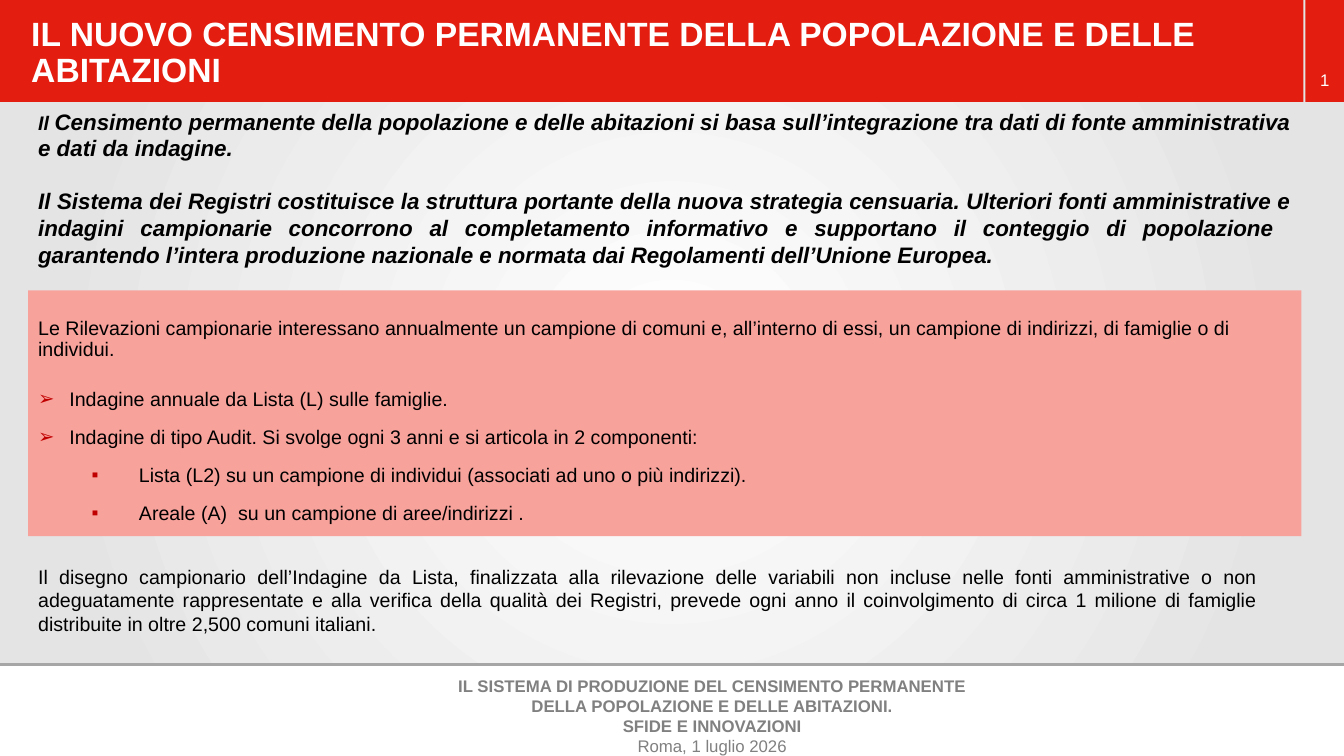
from lxml import etree
from pptx import Presentation
from pptx.dml.color import RGBColor
from pptx.enum.shapes import MSO_CONNECTOR, MSO_SHAPE
from pptx.enum.text import MSO_ANCHOR, MSO_AUTO_SIZE, PP_ALIGN
from pptx.oxml import parse_xml
from pptx.oxml.ns import qn
from pptx.util import Inches, Pt

LEFT, CENTER, JUSTIFY = PP_ALIGN.LEFT, PP_ALIGN.CENTER, PP_ALIGN.JUSTIFY
TOP, BOTTOM = MSO_ANCHOR.TOP, MSO_ANCHOR.BOTTOM
RECTANGLE, STRAIGHT = MSO_SHAPE.RECTANGLE, MSO_CONNECTOR.STRAIGHT
GROW = MSO_AUTO_SIZE.SHAPE_TO_FIT_TEXT

WHITE = RGBColor(0xFF, 0xFF, 0xFF)
BLACK = RGBColor(0, 0, 0)
RED = RGBColor(0xE3, 0x1E, 0x11)
PINK = RGBColor(0xF8, 0xA2, 0x9C)
BULLET_RED = RGBColor(0xC0, 0, 0)
GRAY = RGBColor(0x80, 0x80, 0x80)
RULE_GRAY = RGBColor(0xA6, 0xA6, 0xA6)
EDGE_GRAY = RGBColor(0xE4, 0xE4, 0xE4)

FONT = "Arial"
SLIDE_W, SLIDE_H = Inches(13.333), Inches(7.5)
MARGIN = 2.1  # percent of the slide width
CONTENT_W = 94.73
HEADER_H = 13.47  # percent of the slide height
INSETS = (0.1, 0.05, 0.1, 0.05)  # left, top, right, bottom in inches

TITLE = "IL NUOVO CENSIMENTO PERMANENTE DELLA POPOLAZIONE E DELLE ABITAZIONI"
REGISTERS = (
    "Il Sistema dei Registri costituisce la struttura portante della nuova strategia "
    "censuaria. Ulteriori fonti amministrative e indagini campionarie concorrono al "
    "completamento informativo e supportano il conteggio di popolazione  garantendo "
    "l’intera produzione nazionale e normata dai Regolamenti dell’Unione Europea."
)
SAMPLE_INTRO = (
    "Le Rilevazioni campionarie interessano annualmente un campione di comuni e, "
    "all’interno di essi, un campione di indirizzi, di famiglie o di individui."
)
# Bullet, text margin and hanging indent in inches, text
SURVEYS = [
    ("➢", 0.31, 0.31, "Indagine annuale da Lista (L) sulle famiglie."),
    ("➢", 0.31, 0.31, "Indagine di tipo Audit. Si svolge ogni 3 anni e si articola in 2 componenti:"),
    ("▪", 1, 0.47, "Lista (L2) su un campione di individui (associati ad uno o più indirizzi)."),
    ("▪", 1, 0.47, "Areale (A)  su un campione di aree/indirizzi ."),
]
DESIGN = (
    "Il disegno campionario dell’Indagine da Lista, finalizzata alla rilevazione delle "
    "variabili non incluse nelle fonti amministrative o non adeguatamente rappresentate "
    "e alla verifica della qualità dei Registri, prevede ogni anno il coinvolgimento di "
    "circa 1 milione di famiglie distribuite in oltre 2,500 comuni italiani."
)
EVENT = [
    "IL SISTEMA DI PRODUZIONE DEL CENSIMENTO PERMANENTE",
    "DELLA POPOLAZIONE E DELLE ABITAZIONI.",
    "SFIDE E INNOVAZIONI",
]


def across(percent):
    return round(SLIDE_W * percent / 100)


def down(percent):
    return round(SLIDE_H * percent / 100)


def area(left, top, width, height):
    return across(left), down(top), across(width), down(height)


def set_background(slide):
    stops = "".join(
        f'<a:gs pos="{share * 1000}"><a:srgbClr val="{color}"/></a:gs>'
        for share, color in [(0, WHITE), (83, EDGE_GRAY), (99, EDGE_GRAY)]
    )
    gradient = parse_xml(
        '<a:gradFill xmlns:a="http://schemas.openxmlformats.org/drawingml/2006/main" '
        f'rotWithShape="1"><a:gsLst>{stops}</a:gsLst><a:path path="circle">'
        '<a:fillToRect l="50000" t="50000" r="50000" b="50000"/></a:path></a:gradFill>'
    )
    fill = slide.background.fill
    fill.solid()
    solid = slide.element.find(".//" + qn("p:bgPr")).find(qn("a:solidFill"))
    solid.getparent().replace(solid, gradient)


def set_frame(frame, insets=INSETS, anchor=TOP):
    frame.word_wrap = True
    frame.vertical_anchor = anchor
    frame.margin_left, frame.margin_top, frame.margin_right, frame.margin_bottom = map(Inches, insets)
    return frame


def add_panel(slide, place, color, insets=INSETS, anchor=TOP):
    panel = slide.shapes.add_shape(RECTANGLE, *area(*place))
    panel.shadow.inherit = False
    panel.fill.solid()
    panel.fill.fore_color.rgb = color
    panel.line.fill.background()
    return set_frame(panel.text_frame, insets, anchor)


def add_text_area(slide, place, insets=INSETS):
    frame = slide.shapes.add_textbox(*area(*place)).text_frame
    frame.auto_size = GROW
    return set_frame(frame, insets)


def add_rule(slide, top):
    rule = slide.shapes.add_connector(STRAIGHT, 0, down(top), SLIDE_W, down(top))
    rule.line.color.rgb = RULE_GRAY
    rule.line.width = Pt(1.75)
    etree.SubElement(rule._element.spPr, qn("a:effectLst"))


def write(frame, text, size, color=BLACK, bold=False, italic=False, align=LEFT, spacing=1, after=0):
    first = frame.paragraphs[0]
    paragraph = frame.add_paragraph() if first.text else first
    paragraph.text = text
    paragraph.alignment = align
    paragraph.line_spacing = spacing
    paragraph.space_after = Pt(after)
    for run in paragraph.runs:
        font = run.font
        font.name, font.size = FONT, Pt(size)
        font.bold, font.italic = bold, italic
        font.color.rgb = color
    return paragraph


def add_bullet(paragraph, mark, margin, hanging):
    properties = paragraph._p.get_or_add_pPr()
    properties.set("marL", str(Inches(margin)))
    properties.set("indent", str(-Inches(hanging)))
    color = etree.SubElement(properties, qn("a:buClr"))
    etree.SubElement(color, qn("a:srgbClr"), val=str(BULLET_RED))
    etree.SubElement(properties, qn("a:buFont"), typeface=FONT)
    etree.SubElement(properties, qn("a:buChar"), char=mark)


def add_header(slide):
    number = add_panel(slide, (97.13, 0, 2.87, HEADER_H), RED, (0.1, 0.05, 0.1, 0.12), BOTTOM)
    write(number, "1", 12, WHITE, align=CENTER)
    title = add_panel(slide, (0, 0, 96.98, HEADER_H), RED, (0.31, 0.31, 0.31, 0.12), BOTTOM)
    write(title, TITLE, 24, WHITE, bold=True, spacing=0.9)


def add_footer(slide):
    add_panel(slide, (0, 87.73, 100, 12.27), WHITE)
    add_rule(slide, 87.87)
    event = add_text_area(slide, (32.03, 89.33, 41.93, 10.8), (0, 0, 0, 0))
    for line in EVENT:
        write(event, line, 12, GRAY, bold=True, align=CENTER)
    write(event, "Roma, 1 luglio 2026", 12, GRAY, align=CENTER)


def add_strategy(slide):
    strategy = add_text_area(slide, (MARGIN, 13.6, CONTENT_W, 22.93))
    style = dict(bold=True, italic=True, align=JUSTIFY)
    opening = write(strategy, "Il ", 14, after=18.4, **style)
    rest = opening.add_run()
    rest.text = (
        "Censimento permanente della popolazione e delle abitazioni si basa "
        "sull’integrazione tra dati di fonte amministrativa e dati da indagine."
    )
    rest.font.name, rest.font.size = FONT, Pt(16)
    rest.font.bold = rest.font.italic = True
    rest.font.color.rgb = BLACK
    write(strategy, REGISTERS, 16, **style)


def add_surveys(slide):
    surveys = add_panel(slide, (MARGIN, 38.4, CONTENT_W, 32.53), PINK, (0.1, 0.28, 0.1, 0.05))
    write(surveys, SAMPLE_INTRO, 14, spacing=0.9, after=14.5)
    for mark, margin, hanging, text in SURVEYS:
        survey = write(surveys, text, 14, align=JUSTIFY, spacing=0.9, after=6)
        survey.space_before = Pt(6)
        add_bullet(survey, mark, margin, hanging)


def main():
    deck = Presentation()
    deck.slide_width, deck.slide_height = SLIDE_W, SLIDE_H
    slide = deck.slides.add_slide(deck.slide_layouts[6])
    set_background(slide)
    # Red title band and white event band
    add_header(slide)
    add_footer(slide)
    # Census strategy, sample surveys and sampling design
    add_strategy(slide)
    add_surveys(slide)
    design = add_text_area(slide, (MARGIN, 74, 92.25, 10.8))
    write(design, DESIGN, 14, align=JUSTIFY)
    deck.save("out.pptx")


if __name__ == "__main__":
    main()
